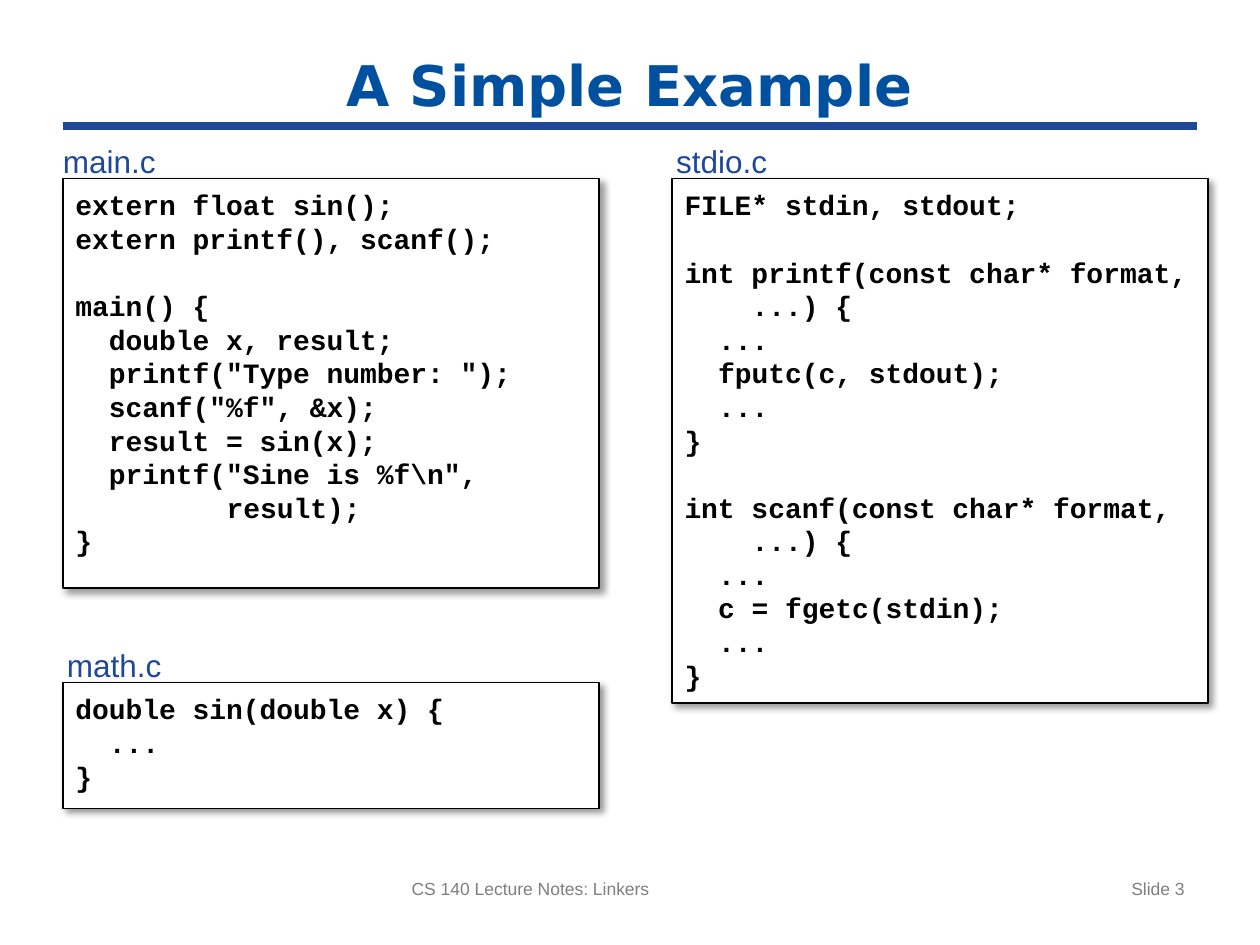
from lxml import etree
from pptx import Presentation, util as u
from pptx.dml.color import RGBColor
from pptx.enum import shapes, text
from pptx.oxml import parse_xml
from pptx.oxml.ns import nsdecls, qn

BLUE = RGBColor(0x1F, 0x48, 0x99)
TITLE_BLUE = RGBColor(0x00, 0x50, 0xA0)
GRAY = RGBColor(0x7F, 0x7F, 0x7F)
BLACK = RGBColor(0, 0, 0)
WHITE = RGBColor(0xFF, 0xFF, 0xFF)

CODE_SIZE = 16
CODE_LINE = u.Pt(19.2)
CHARACTER_WIDTH = u.Pt(0.6 * CODE_SIZE)

MAIN_C = r'''extern float sin();
extern printf(), scanf();

main() {
  double x, result;
  printf("Type number: ");
  scanf("%f", &x);
  result = sin(x);
  printf("Sine is %f\n",
         result);
}'''

STDIO_C = '''FILE* stdin, stdout;

int printf(const char* format,
    ...) {
  ...
  fputc(c, stdout);
  ...
}

int scanf(const char* format,
    ...) {
  ...
  c = fgetc(stdin);
  ...
}'''

MATH_C = '''double sin(double x) {
  ...
}'''


def style(paragraph, name, size, color, bold=False):
    font = paragraph.font
    font.name, font.size, font.bold = name, u.Pt(size), bold
    font.color.rgb = color


def add_title(slide, left, top, width, height):
    title = slide.shapes.title
    title.left, title.top, title.width, title.height = left, top, width, height
    title.text_frame.text = "A Simple Example"
    title.text_frame.vertical_anchor = text.MSO_ANCHOR.MIDDLE
    paragraph = title.text_frame.paragraphs[0]
    paragraph.alignment = text.PP_ALIGN.CENTER
    style(paragraph, "DejaVu Sans", 32, TITLE_BLUE, True)

    bottom = top + height
    rule = slide.shapes.add_connector(
        shapes.MSO_CONNECTOR.STRAIGHT, left, bottom, left + width, bottom)
    rule.line.color.rgb = BLUE
    rule.line.width = u.Pt(4.5)
    etree.SubElement(rule._element.spPr, qn("a:effectLst"))


def add_label(slide, left, top, caption):
    label = slide.shapes.add_textbox(left, top, u.Cm(2.46), u.Cm(0.69))
    frame = label.text_frame
    frame.word_wrap = True
    frame.margin_left = frame.margin_right = 0
    frame.margin_top = frame.margin_bottom = 0
    frame.text = caption
    paragraph = frame.paragraphs[0]
    paragraph.line_spacing = 0.9
    style(paragraph, "Arial", 18, BLUE)


def add_shadow(shape):
    shape._element.spPr.append(parse_xml(
        f'<a:effectLst {nsdecls("a")}>'
        f'<a:outerShdw blurRad="{u.Pt(4)}" dist="{u.Pt(3)}" dir="2700000" '
        'algn="tl" rotWithShape="0">'
        '<a:srgbClr val="000000"><a:alpha val="40000"/></a:srgbClr>'
        '</a:outerShdw></a:effectLst>'))


def fill_code(frame, code):
    frame.word_wrap = True
    frame.vertical_anchor = text.MSO_ANCHOR.TOP
    frame.margin_top = u.Cm(0.19)
    paragraph = frame.paragraphs[0]
    for block_index, block in enumerate(code.split("\n\n")):
        for line_index, line in enumerate(block.split("\n")):
            if block_index or line_index:
                paragraph = frame.add_paragraph()
            statement = line.lstrip()
            paragraph.text = statement
            paragraph.alignment = text.PP_ALIGN.LEFT
            paragraph.line_spacing = CODE_LINE
            if block_index and not line_index:
                paragraph.space_before = CODE_LINE
            indent = (len(line) - len(statement)) * CHARACTER_WIDTH
            properties = paragraph._p.get_or_add_pPr()
            properties.set("marL", str(indent))
            properties.set("indent", "0")
            style(paragraph, "Courier New", CODE_SIZE, BLACK, True)


def add_source_file(slide, left, top, width, height, name, code, label_shift):
    box = slide.shapes.add_shape(
        shapes.MSO_SHAPE.RECTANGLE, left, top, width, height)
    box.fill.solid()
    box.fill.fore_color.rgb = WHITE
    box.line.color.rgb = BLACK
    box.line.width = u.Pt(1)
    add_shadow(box)
    fill_code(box.text_frame, code)
    add_label(slide, left + label_shift, top - u.Cm(0.66), name)


def add_footer(slide, left, top, width, height, caption, alignment):
    footer = slide.shapes.add_textbox(left, top, width, height)
    footer.text_frame.word_wrap = True
    footer.text_frame.text = caption
    paragraph = footer.text_frame.paragraphs[0]
    paragraph.alignment = alignment
    style(paragraph, "Arial", 10, GRAY)


def main():
    presentation = Presentation()
    presentation.slide_width, presentation.slide_height = u.Cm(25.4), u.Cm(19.05)
    slide = presentation.slides.add_slide(presentation.slide_layouts[5])

    add_title(slide, u.Cm(1.27), u.Cm(0.84), u.Cm(22.86), u.Cm(1.7))
    for left, top, height, name, code, label_shift in (
        (1.27, 3.6, 8.26, "main.c", MAIN_C, 0),
        (13.55, 3.6, 10.58, "stdio.c", STDIO_C, 0.08),
        (1.27, 13.76, 2.54, "math.c", MATH_C, 0.08),
    ):
        add_source_file(slide, u.Cm(left), u.Cm(top), u.Cm(10.8), u.Cm(height),
                        name, code, u.Cm(label_shift))
    for left, width, caption, alignment in (
        (8.05, 9.53, "CS 140 Lecture Notes: Linkers", text.PP_ALIGN.LEFT),
        (18.21, 5.92, "Slide 3", text.PP_ALIGN.RIGHT),
    ):
        add_footer(slide, u.Cm(left), u.Cm(17.57), u.Cm(width), u.Cm(1.09),
                   caption, alignment)
    presentation.save("out.pptx")


if __name__ == "__main__":
    main()
